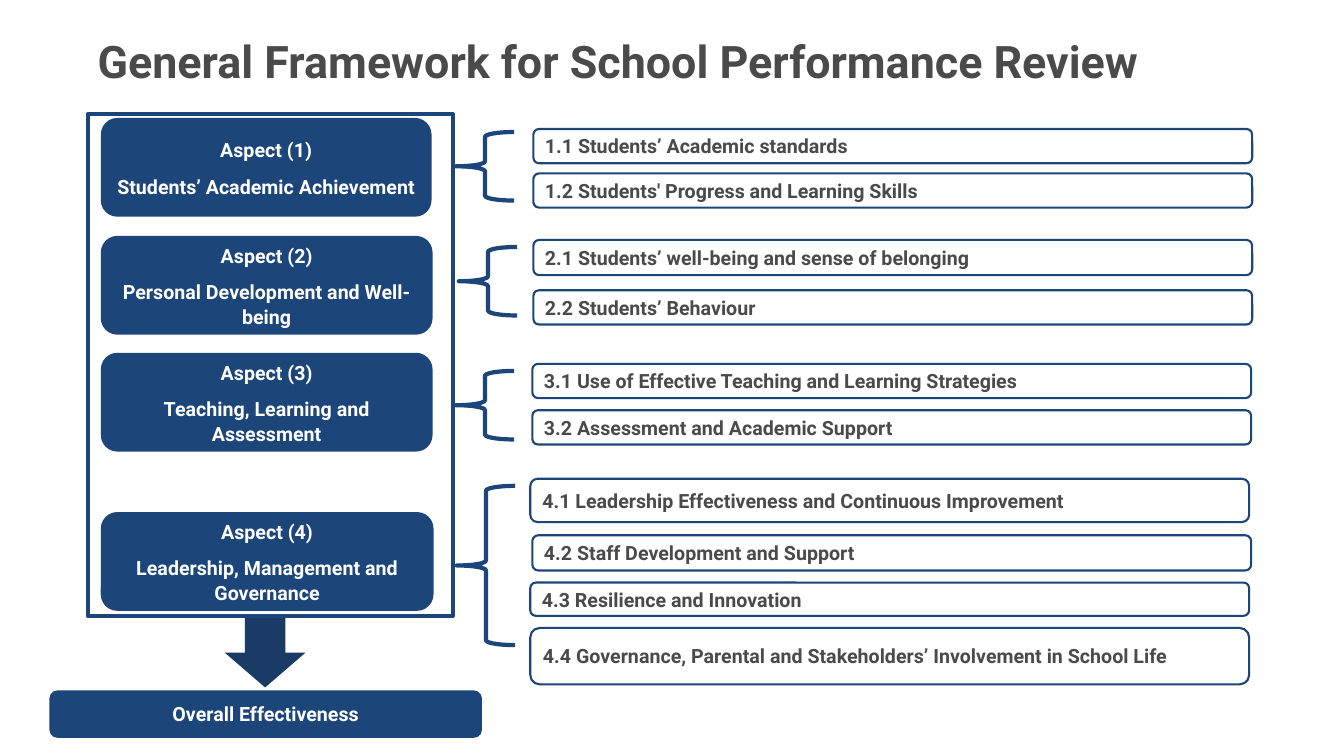
from pptx import Presentation
from pptx.dml.color import RGBColor
from pptx.enum import shapes, text
from pptx.util import Inches, Pt

NAVY, ARROW, GREY, WHITE = "1C4679", "193B66", "4A4A4A", "FFFFFF"
MSO, ALIGN = shapes.MSO_SHAPE, text.PP_ALIGN

prs = Presentation()
prs.slide_width, prs.slide_height = Inches(13.33), Inches(7.5)
s = prs.slides.add_slide(prs.slide_layouts[6])


def add_shape(kind, box, fill=None, line=None, width=1.5):
    sp = s.shapes.add_shape(kind, *map(Inches, box))
    sp.shadow.inherit = False
    if fill:
        sp.fill.solid()
        sp.fill.fore_color.rgb = RGBColor.from_string(fill)
    else:
        sp.fill.background()
    if line:
        sp.line.color.rgb = RGBColor.from_string(line)
        sp.line.width = Pt(width)
    else:
        sp.line.fill.background()
    return sp


def set_text(sp, words, color, align, size=14):
    tf = sp.text_frame
    tf.word_wrap = True
    tf.vertical_anchor = text.MSO_ANCHOR.MIDDLE
    tf.text = words
    for p in tf.paragraphs:
        p.alignment = align
        for r in p.runs:
            r.font.name = "Roboto"
            r.font.size = Pt(size)
            r.font.bold = True
            r.font.color.rgb = RGBColor.from_string(color)
    return tf


title = s.shapes.add_textbox(Inches(0.87), Inches(0.23), Inches(11.5), Inches(0.81))
tf = set_text(title, "General Framework for School Performance Review", GREY, ALIGN.LEFT, 32)
tf.paragraphs[0].line_spacing = 0.9

add_shape(MSO.DOWN_ARROW, (2.23, 6.13, 0.8, 0.69), ARROW)

aspects = [
    ("Students’ Academic Achievement", 1.17, 3.28, (4.52, 1.31, 0.58, 0.68), [
        ("Students’ Academic standards", 5.29, 1.28, 0.34),
        ("Students' Progress and Learning Skills", 5.29, 1.72, 0.34)]),
    ("Personal Development and Well-being", 2.34, 3.29, (4.55, 2.45, 0.58, 0.68), [
        ("Students’ well-being and sense of belonging", 5.29, 2.38, 0.35),
        ("Students’ Behaviour", 5.29, 2.88, 0.34)]),
    ("Teaching, Learning and Assessment", 3.5, 3.29, (4.52, 3.68, 0.58, 0.68), [
        ("Use of Effective Teaching and Learning Strategies", 5.28, 3.61, 0.34),
        ("Assessment and Academic Support", 5.28, 4.07, 0.34)]),
    ("Leadership, Management and Governance", 5.08, 3.3, (4.53, 4.82, 0.58, 1.58), [
        ("Leadership Effectiveness and Continuous Improvement", 5.26, 4.75, 0.43),
        ("Staff Development and Support", 5.28, 5.31, 0.35),
        ("Resilience and Innovation", 5.26, 5.78, 0.33),
        ("Governance, Parental and Stakeholders’ Involvement in School Life", 5.26, 6.23, 0.56)]),
]

for number, (name, top, width, brace, criteria) in enumerate(aspects, 1):
    sp = add_shape(MSO.ROUNDED_RECTANGLE, (1, top, width, 0.98), NAVY)
    tf = set_text(sp, f"Aspect ({number})\n{name}", WHITE, ALIGN.CENTER)
    for p in tf.paragraphs:
        p.line_spacing = 1.07
        p.space_after = Pt(8)
    add_shape(MSO.LEFT_BRACE, brace, line=NAVY, width=3)
    for item, (label, left, y, height) in enumerate(criteria, 1):
        sp = add_shape(MSO.ROUNDED_RECTANGLE, (left, y, 7.13, height), WHITE, NAVY)
        set_text(sp, f"{number}.{item} {label}", GREY, ALIGN.JUSTIFY)

sp = add_shape(MSO.ROUNDED_RECTANGLE, (0.49, 6.85, 4.29, 0.47), NAVY)
set_text(sp, "Overall Effectiveness", WHITE, ALIGN.CENTER)

add_shape(MSO.RECTANGLE, (0.87, 1.13, 3.62, 4.98), line=NAVY, width=3)

prs.save("out.pptx")
